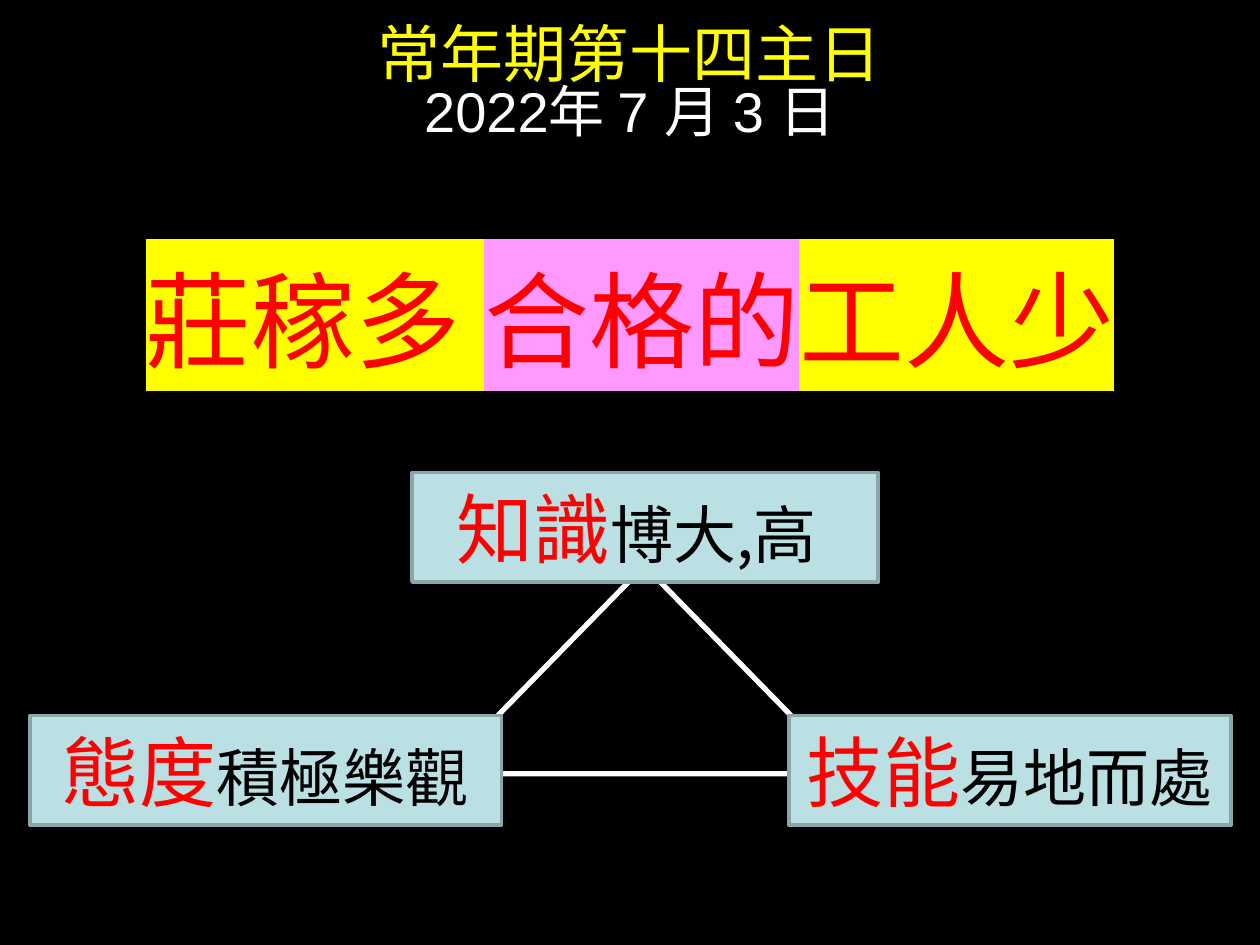
from lxml import etree
from pptx import Presentation
from pptx import util as u
from pptx.dml.color import RGBColor
from pptx.enum import shapes, text
from pptx.oxml.ns import qn

RED, YELLOW, PINK, WHITE, BLACK = "FF0000", "FFFF00", "FF99FF", "FFFFFF", "000000"
SC, JP = "Noto Sans CJK SC", "Noto Sans CJK JP"

rgb = RGBColor.from_string


def add_run(paragraph, words, size, color, latin="Arial", asian=SC, highlight=None):
    run = paragraph.add_run()
    run.text = words
    run.font.size = u.Pt(size)
    run.font.color.rgb = rgb(color)
    run.font.name = latin
    props = run.font._element
    props.find(qn("a:latin")).addnext(
        etree.Element(qn("a:ea"), typeface=asian))
    if highlight:
        mark = etree.Element(qn("a:highlight"))
        etree.SubElement(mark, qn("a:srgbClr"), val=highlight)
        props.find(qn("a:solidFill")).addnext(mark)


prs = Presentation()
prs.slide_width, prs.slide_height = u.Inches(10), u.Inches(7.5)
slide = prs.slides.add_slide(prs.slide_layouts[6])
slide.background.fill.solid()
slide.background.fill.fore_color.rgb = rgb(BLACK)


def cells(*lengths):
    """Lengths on a grid of 100 columns by 75 rows of square cells."""
    return [int(n * prs.slide_width / 100) for n in lengths]


# Sunday and date
heading = slide.shapes.add_textbox(*cells(0, 1.8, 100, 13)).text_frame
heading.word_wrap = True
sunday, date = heading.paragraphs[0], heading.add_paragraph()
add_run(sunday, "常年期第十四主日", 36, YELLOW)
add_run(date, "2022年 7 月 3 日", 32, WHITE)
for line in (sunday, date):
    line.alignment = text.PP_ALIGN.CENTER
    line.line_spacing = 0.8

# Theme
theme = slide.shapes.add_textbox(*cells(0, 19.8, 100, 13)).text_frame
theme.word_wrap = True
theme.paragraphs[0].alignment = text.PP_ALIGN.CENTER
for words, marker in (("莊稼多 ", YELLOW), ("合格的", PINK), ("工人少", YELLOW)):
    add_run(theme.paragraphs[0], words, 60, RED, highlight=marker)

# Triangle linking the three qualities
triangle = slide.shapes.add_shape(
    shapes.MSO_SHAPE.ISOSCELES_TRIANGLE, *cells(35, 44.9, 32.3, 16.5))
triangle.shadow.inherit = False
triangle.fill.background()
triangle.line.color.rgb = rgb(WHITE)
triangle.line.width = u.Pt(3)

# Qualities: left, top, width, key word, description, trailing gap
qualities = (
    (32.7, 37.5, 37, "知識", "博大,高", " "),
    (62.6, 56.8, 35.1, "技能", "易地而處", ""),
    (2.4, 56.8, 37.4, "態度", "積極樂觀", ""),
)
for left, top, width, key, description, gap in qualities:
    quality = slide.shapes.add_shape(
        shapes.MSO_SHAPE.RECTANGLE, *cells(left, top, width, 8.7))
    quality.shadow.inherit = False
    quality.fill.solid()
    quality.fill.fore_color.rgb = rgb("BBE0E3")
    quality.line.color.rgb = rgb("8AA6A8")
    quality.line.width = u.Pt(2)
    frame = quality.text_frame
    frame.word_wrap = True
    frame.vertical_anchor = text.MSO_ANCHOR.MIDDLE
    label = frame.paragraphs[0]
    label.alignment = text.PP_ALIGN.CENTER
    add_run(label, key, 44, RED, SC, SC)
    add_run(label, description, 36, BLACK, JP, JP)
    if gap:
        add_run(label, gap, 44, RED, JP, JP)

prs.save("out.pptx")
